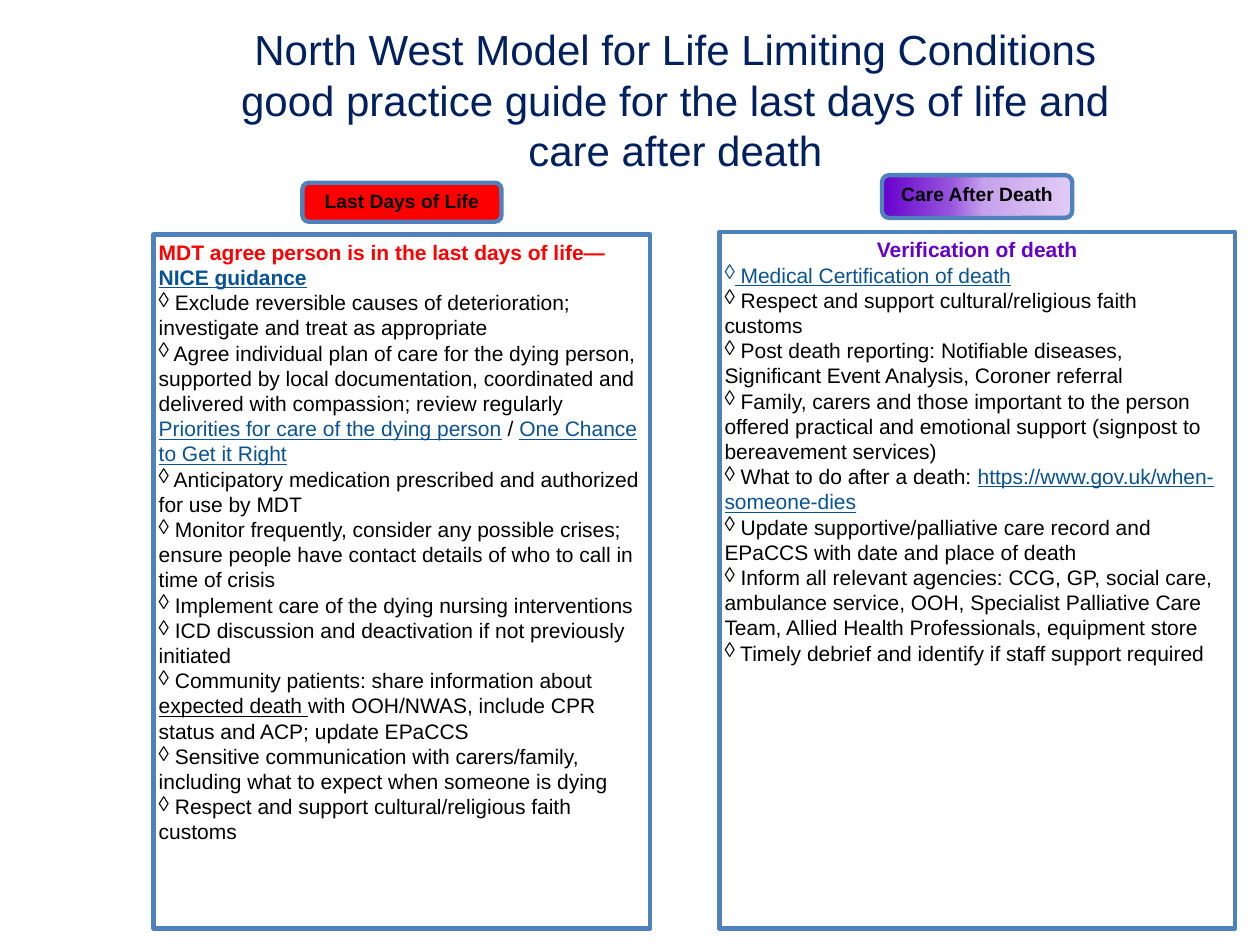
from lxml import etree
from pptx import Presentation
from pptx.dml.color import RGBColor
from pptx.enum.shapes import MSO_SHAPE as Shape
from pptx.enum.text import MSO_ANCHOR as Anchor, PP_ALIGN as Align
from pptx.oxml.ns import qn
from pptx.util import Inches, Pt

BLACK = RGBColor(0x00, 0x00, 0x00)
WHITE = RGBColor(0xFF, 0xFF, 0xFF)
RED = RGBColor(0xFF, 0x00, 0x00)
PURPLE = RGBColor(0x66, 0x00, 0xCC)
NAVY = RGBColor(0x00, 0x20, 0x60)
LINK_BLUE = RGBColor(0x08, 0x52, 0x96)
BORDER_BLUE = RGBColor(0x4F, 0x81, 0xBD)
PURPLE_FADE = [(0, PURPLE), (35, RGBColor(0x96, 0x51, 0xDC)),
               (54, RGBColor(0xC7, 0xA2, 0xEC)), (100, RGBColor(0xE1, 0xCC, 0xF5))]

# Run styles: colour, bold, underline
PLAIN = (BLACK, False, False)
UNDERLINED = (BLACK, False, True)
LINK = (LINK_BLUE, False, True)
BOLD_LINK = (LINK_BLUE, True, True)
LABEL = (BLACK, True, False)
RED_HEADING = (RED, True, False)
PURPLE_HEADING = (PURPLE, True, False)
TITLE_STYLE = (NAVY, False, False)

TITLE = ("North West Model for Life Limiting Conditions good practice guide "
         "for the last days of life and care after death")

# A bullet is a plain string, or a list of (text, style) runs; "\n" breaks the line.
COLUMNS = [
    {
        "label": "Last Days of Life", "label_box": (2.4, 1.45, 1.58, 0.31),
        "label_fill": RED, "panel_box": (1.22, 1.86, 3.94, 5.51),
        "heading": [("MDT agree person is in the last days of life—", RED_HEADING),
                    ("NICE guidance", BOLD_LINK)],
        "heading_align": Align.LEFT,
        "bullets": [
            "Exclude reversible causes of deterioration; investigate and treat as appropriate",
            [("Agree individual plan of care for the dying person, supported by local "
              "documentation, coordinated and delivered with compassion; review regularly ", PLAIN),
             ("Priorities for care of the dying person", LINK),
             (" / ", PLAIN),
             ("One Chance to Get it Right", LINK)],
            "Anticipatory medication prescribed and authorized for use by MDT",
            "Monitor frequently, consider any possible crises; ensure people have contact "
            "details of who to call in time of crisis",
            "Implement care of the dying nursing interventions",
            "ICD discussion and deactivation if not previously initiated",
            [("Community patients: share information about ", PLAIN),
             ("expected death ", UNDERLINED),
             ("with OOH/NWAS, include CPR status and ACP; update EPaCCS", PLAIN)],
            "Sensitive communication with carers/family, including what to expect when "
            "someone is dying",
            "Respect and support cultural/religious faith customs",
        ],
    },
    {
        "label": "Care After Death", "label_box": (7, 1.39, 1.51, 0.34),
        "label_fill": PURPLE_FADE, "panel_box": (5.71, 1.84, 4.09, 5.53),
        "heading": [("Verification of death", PURPLE_HEADING)],
        "heading_align": Align.CENTER,
        "bullets": [
            [("Medical Certification of death", LINK)],
            "Respect and support cultural/religious faith\ncustoms",
            "Post death reporting: Notifiable diseases,\nSignificant Event Analysis, "
            "Coroner referral",
            "Family, carers and those important to the person offered practical and "
            "emotional support (signpost to bereavement services)",
            [("What to do after a death: ", PLAIN),
             ("https://www.gov.uk/when-someone-dies", LINK)],
            "Update supportive/palliative care record and EPaCCS with date and place of death",
            "Inform all relevant agencies: CCG, GP, social care, ambulance service, OOH, "
            "Specialist Palliative Care Team, Allied Health Professionals, equipment store",
            "Timely debrief and identify if staff support required",
        ],
    },
]


def add_runs(paragraph, runs, size):
    for text, (color, bold, underline) in runs:
        for index, line in enumerate(text.split("\n")):
            if index:
                paragraph.add_line_break()
            run = paragraph.add_run()
            run.text = line
            font = run.font
            font.name, font.size = "Arial", Pt(size)
            font.bold, font.underline = bold, underline
            font.color.rgb = color


def add_bullet(paragraph):
    properties = paragraph._p.get_or_add_pPr()
    properties.set("marL", "0")
    properties.set("indent", "0")
    etree.SubElement(properties, qn("a:buChar")).set("char", "◊")


def fill_with(shape, fill):
    """Fill with one colour, or left to right with a list of (percent, colour) stops."""
    if isinstance(fill, RGBColor):
        shape.fill.solid()
        shape.fill.fore_color.rgb = fill
        return
    shape.fill.gradient()
    shape.fill.gradient_angle = 0
    stops = shape._element.spPr.find(qn("a:gradFill")).find(qn("a:gsLst"))
    for stop in list(stops):
        stops.remove(stop)
    for percent, color in fill:
        stop = etree.SubElement(stops, qn("a:gs"), pos=str(percent * 1000))
        etree.SubElement(stop, qn("a:srgbClr"), val=str(color))


def add_framed_shape(slide, kind, box, fill):
    shape = slide.shapes.add_shape(kind, *map(Inches, box))
    shape.shadow.inherit = False
    fill_with(shape, fill)
    shape.line.color.rgb = BORDER_BLUE
    shape.line.width = Pt(2.5)
    frame = shape.text_frame
    frame.word_wrap = True
    frame.vertical_anchor = Anchor.TOP
    frame.margin_left = frame.margin_right = Inches(0.04)
    frame.margin_top = frame.margin_bottom = Inches(0.04)
    return frame


def add_panel(slide, column):
    frame = add_framed_shape(slide, Shape.RECTANGLE, column["panel_box"], WHITE)
    heading = frame.paragraphs[0]
    heading.alignment = column["heading_align"]
    add_runs(heading, column["heading"], 12)
    for bullet in column["bullets"]:
        runs = [(bullet, PLAIN)] if isinstance(bullet, str) else bullet
        (first_text, first_style), *others = runs
        paragraph = frame.add_paragraph()
        paragraph.alignment = Align.LEFT
        add_bullet(paragraph)
        add_runs(paragraph, [(" " + first_text, first_style), *others], 12)


def add_label(slide, column):
    frame = add_framed_shape(slide, Shape.ROUNDED_RECTANGLE,
                             column["label_box"], column["label_fill"])
    paragraph = frame.paragraphs[0]
    paragraph.alignment = Align.CENTER
    add_runs(paragraph, [(column["label"], LABEL)], 11)


def add_title(slide):
    box = slide.shapes.add_textbox(*map(Inches, (1.69, 0.14, 7.34, 1.31)))
    box.text_frame.word_wrap = True
    paragraph = box.text_frame.paragraphs[0]
    paragraph.alignment = Align.CENTER
    add_runs(paragraph, [(TITLE, TITLE_STYLE)], 24)


def main():
    presentation = Presentation()
    presentation.slide_width, presentation.slide_height = Inches(10), Inches(7.5)
    slide = presentation.slides.add_slide(presentation.slide_layouts[6])
    for add_part in (add_panel, add_label):
        for column in COLUMNS:
            add_part(slide, column)
    add_title(slide)
    presentation.save("out.pptx")


if __name__ == "__main__":
    main()
